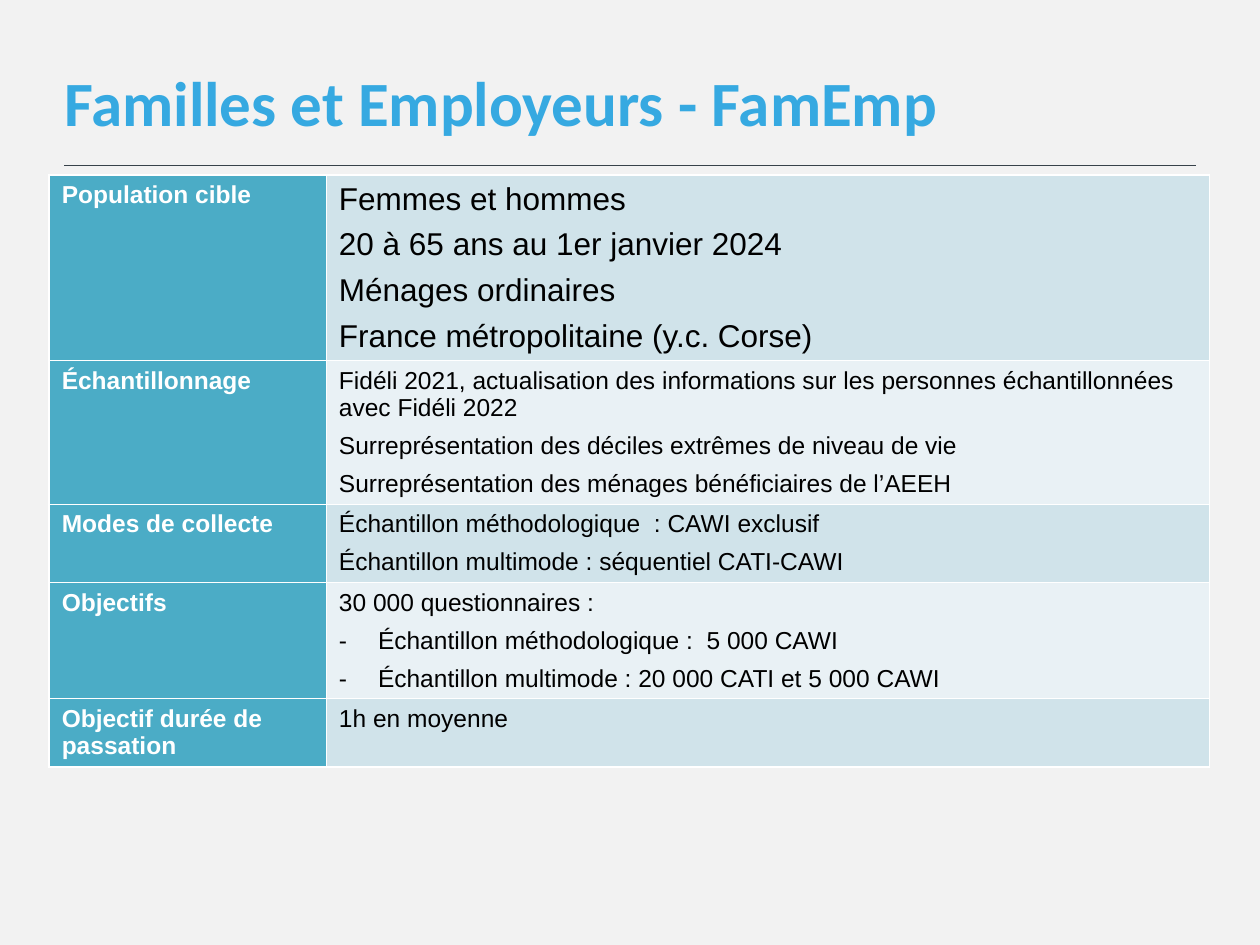
from dataclasses import dataclass

from lxml import etree
from pptx import Presentation
from pptx.dml.color import RGBColor
from pptx.enum import shapes, text
from pptx.oxml import ns
from pptx.util import Inches, Pt

BACKGROUND = RGBColor(0xF2, 0xF2, 0xF2)
TITLE_BLUE = RGBColor(0x36, 0xA9, 0xE1)
RULE_GREY = RGBColor(0x37, 0x42, 0x4A)
HEADER_TEAL = RGBColor(0x4B, 0xAC, 0xC6)
BANDS = (RGBColor(0xD0, 0xE3, 0xEA), RGBColor(0xE9, 0xF1, 0xF5))
WHITE = RGBColor(0xFF, 0xFF, 0xFF)
BLACK = RGBColor(0, 0, 0)


@dataclass
class SurveyRow:
    label: str
    lines: list[str]
    height: float
    size: int = 14
    dashed_from: int = 99  # index of the first dashed line


ROWS = [
    SurveyRow("Population cible",
              ["Femmes et hommes", "20 à 65 ans au 1er janvier 2024",
               "Ménages ordinaires", "France métropolitaine (y.c. Corse)"],
              1.46, size=18),
    SurveyRow("Échantillonnage",
              ["Fidéli 2021, actualisation des informations sur les personnes "
               "échantillonnées avec Fidéli 2022",
               "Surreprésentation des déciles extrêmes de niveau de vie",
               "Surreprésentation des ménages bénéficiaires de l’AEEH"], 1.14),
    SurveyRow("Modes de collecte",
              ["Échantillon méthodologique  : CAWI exclusif",
               "Échantillon multimode : séquentiel CATI-CAWI"], 0.62),
    SurveyRow("Objectifs",
              ["30 000 questionnaires :",
               "Échantillon méthodologique :  5 000 CAWI",
               "Échantillon multimode : 20 000 CATI et 5 000 CAWI"],
              0.92, dashed_from=1),
    SurveyRow("Objectif durée de passation", ["1h en moyenne"], 0.54),
]


def add_run(p, words: str, font: str, size: int, color: RGBColor, bold: bool) -> None:
    r = p.add_run()
    r.text = words
    r.font.name = font
    r.font.size = Pt(size)
    r.font.bold = bold
    r.font.color.rgb = color


def add_dash(p) -> None:
    """Give the paragraph a dash bullet with a hanging indent."""
    pPr = p._p.get_or_add_pPr()
    pPr.set("marL", str(Inches(0.31)))
    pPr.set("indent", str(Inches(-0.31)))
    etree.SubElement(pPr, ns.qn("a:buFont"), typeface="Arial")
    etree.SubElement(pPr, ns.qn("a:buChar"), char="-")


def add_borders(cell) -> None:
    tcPr = cell._tc.get_or_add_tcPr()
    for side in ("lnL", "lnR", "lnT", "lnB"):
        ln = etree.SubElement(tcPr, ns.qn(f"a:{side}"), w=str(Pt(1)))
        fill = etree.SubElement(ln, ns.qn("a:solidFill"))
        etree.SubElement(fill, ns.qn("a:srgbClr"), val=str(WHITE))


def fill_cell(cell, lines: list[str], fill: RGBColor, color: RGBColor, size: int,
              bold: bool = False, dashed_from: int = 99) -> None:
    add_borders(cell)
    cell.fill.solid()
    cell.fill.fore_color.rgb = fill
    tf = cell.text_frame
    for i, line in enumerate(lines):
        p = tf.add_paragraph() if i else tf.paragraphs[0]
        if i:
            p.space_before = Pt(6)
        if i >= dashed_from:
            add_dash(p)
        add_run(p, line, "Arial", size, color, bold)


def add_title(slide) -> None:
    title = slide.shapes.title
    title.left, title.top = Inches(0.51), Inches(0.3)
    title.width, title.height = Inches(8.27), Inches(1.01)
    tf = title.text_frame
    tf.auto_size = text.MSO_AUTO_SIZE.NONE
    tf.word_wrap = True
    tf.vertical_anchor = text.MSO_ANCHOR.MIDDLE
    tf.margin_left = 0
    p = tf.paragraphs[0]
    p.alignment = text.PP_ALIGN.LEFT
    add_run(p, "Familles et Employeurs - FamEmp", "Calibri", 36, TITLE_BLUE, True)


def add_rule(slide) -> None:
    rule = slide.shapes.add_connector(shapes.MSO_CONNECTOR.STRAIGHT, Inches(0.51),
                                      Inches(1.31), Inches(9.49), Inches(1.31))
    rule.line.color.rgb = RULE_GREY
    rule.line.width = Pt(0.5)
    etree.SubElement(rule._element.spPr, ns.qn("a:effectLst"))


def add_survey_table(slide) -> None:
    height = sum(row.height for row in ROWS)
    table = slide.shapes.add_table(len(ROWS), 2, Inches(0.39), Inches(1.39),
                                   Inches(9.21), Inches(height)).table
    table.first_row = False
    table.first_col = True
    table.columns[0].width = Inches(2.2)
    table.columns[1].width = Inches(7.01)
    for i, row in enumerate(ROWS):
        table.rows[i].height = Inches(row.height)
        fill_cell(table.cell(i, 0), [row.label], HEADER_TEAL, WHITE, 14, bold=True)
        fill_cell(table.cell(i, 1), row.lines, BANDS[i % 2], BLACK, row.size,
                  dashed_from=row.dashed_from)


def main() -> None:
    prs = Presentation()
    prs.slide_width, prs.slide_height = Inches(10), Inches(7.5)
    slide = prs.slides.add_slide(prs.slide_layouts.get_by_name("Title Only"))
    slide.background.fill.solid()
    slide.background.fill.fore_color.rgb = BACKGROUND
    add_rule(slide)
    add_title(slide)
    add_survey_table(slide)
    prs.save("out.pptx")


if __name__ == "__main__":
    main()
